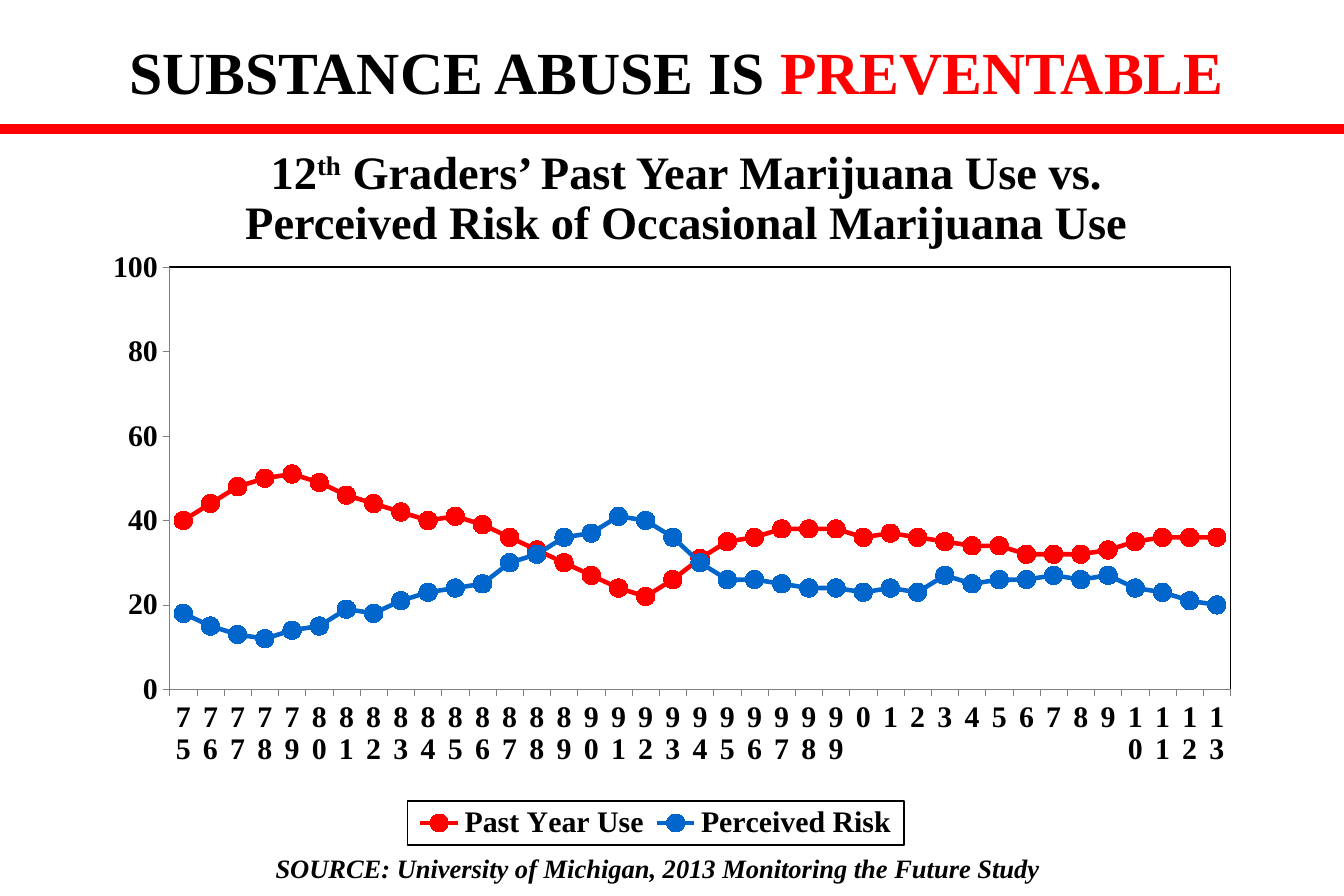
from lxml import etree
from pptx import Presentation
from pptx.chart.data import CategoryChartData
from pptx.dml.color import RGBColor
from pptx.enum.chart import XL_CHART_TYPE as ChartType, XL_LEGEND_POSITION as LegendPos
from pptx.enum.chart import XL_MARKER_STYLE as Marker, XL_TICK_MARK as Tick
from pptx.enum.shapes import MSO_CONNECTOR as Connector
from pptx.enum.text import MSO_ANCHOR as Anchor, PP_ALIGN as Align
from pptx.oxml import parse_xml
from pptx.oxml.ns import nsdecls, qn
from pptx.util import Cm, Pt

BLACK = RGBColor(0, 0, 0)
RED = RGBColor(0xFF, 0, 0)
BLUE = RGBColor(0, 0x66, 0xCC)
GRAY = RGBColor(0x80, 0x80, 0x80)
FONT = "Times New Roman"
SLIDE_W, SLIDE_H = 28.58, 19.05

TITLE = [[(" SUBSTANCE ABUSE IS ", BLACK, 0), ("PREVENTABLE", RED, 0)]]
SUBTITLE = [
    [(" 12", BLACK, 0), ("th", BLACK, 30), (" Graders’ Past Year Marijuana Use vs. ", BLACK, 0)],
    [("Perceived Risk of Occasional Marijuana Use", BLACK, 0)],
]
SOURCE = [[("SOURCE: University of Michigan, 2013 Monitoring the Future Study", BLACK, 0)]]
YEARS = [str(year % 100) for year in range(1975, 2014)]
SERIES = [
    ("Past Year Use", RED,
     [40, 44, 48, 50, 51, 49, 46, 44, 42, 40, 41, 39, 36, 33, 30, 27, 24, 22, 26, 31,
      35, 36, 38, 38, 38, 36, 37, 36, 35, 34, 34, 32, 32, 32, 33, 35, 36, 36, 36]),
    ("Perceived Risk", BLUE,
     [18, 15, 13, 12, 14, 15, 19, 18, 21, 23, 24, 25, 30, 32, 36, 37, 41, 40, 36, 30,
      26, 26, 25, 24, 24, 23, 24, 23, 27, 25, 26, 26, 27, 26, 27, 24, 23, 21, 20]),
]
PLOT_BOX = (0.089, 0.091, 0.897, 0.664)
LEGEND_BOX = (0.29, 0.93, 0.42, 0.07)


def add_text(s, box, lines, size, centered=True, italic=False):
    tf = s.shapes.add_textbox(*map(Cm, box)).text_frame
    tf.word_wrap = True
    p = tf.paragraphs[0]
    if centered:
        tf.vertical_anchor = Anchor.MIDDLE
        p.alignment = Align.CENTER
        p.line_spacing = 0.9
    for i, line in enumerate(lines):
        if i:
            p.add_line_break()
        for text, color, raised in line:
            r = p.add_run()
            r.text = text
            r.font.name, r.font.size = FONT, Pt(size)
            r.font.bold, r.font.italic = True, italic
            r.font.color.rgb = color
            if raised:
                r.font._element.set("baseline", str(raised * 1000))


def layout_xml(box, inner=False):
    target = '<c:layoutTarget val="inner"/>' if inner else ""
    modes = "".join(f'<c:{k}Mode val="edge"/>' for k in "xy")
    sizes = "".join(f'<c:{k} val="{v}"/>' for k, v in zip("xywh", box))
    return parse_xml(f'<c:layout {nsdecls("c")}><c:manualLayout>{target}{modes}{sizes}'
                     '</c:manualLayout></c:layout>')


def frame_xml():
    return parse_xml(f'<c:spPr {nsdecls("c", "a")}><a:noFill/><a:ln w="12700"><a:solidFill>'
                     f'<a:srgbClr val="{BLACK}"/></a:solidFill></a:ln></c:spPr>')


def style_font(font):
    font.name, font.size, font.bold = FONT, Pt(18), True
    font.color.rgb = BLACK


def add_chart(s):
    data = CategoryChartData()
    data.categories = YEARS
    for name, _, values in SERIES:
        data.add_series(name, values)
    box = map(Cm, (1.37, 4.45, 25.15, 13.54))
    chart = s.shapes.add_chart(ChartType.LINE_MARKERS, *box, data).chart
    chart.has_title = False
    style_font(chart.font)

    for ser, (_, color, _) in zip(chart.plots[0].series, SERIES):
        ser.smooth = False
        ser.format.line.color.rgb = color
        ser.format.line.width = Pt(2.75)
        ser.marker.style, ser.marker.size = Marker.CIRCLE, 11
        ser.marker.format.fill.solid()
        ser.marker.format.fill.fore_color.rgb = color
        ser.marker.format.line.color.rgb = color
    chart.plots[0].vary_by_categories = False

    years, percent = chart.category_axis, chart.value_axis
    percent.minimum_scale, percent.maximum_scale, percent.major_unit = 0, 100, 20
    for axis in (years, percent):
        axis.has_major_gridlines = False
        axis.major_tick_mark, axis.minor_tick_mark = Tick.OUTSIDE, Tick.NONE
        axis.format.line.color.rgb = GRAY
        axis.format.line.width = Pt(0.25)
        style_font(axis.tick_labels.font)
    body = years._element.find(qn("c:txPr")).find(qn("a:bodyPr"))
    body.set("rot", "0")
    body.set("vert", "horz")
    skip = parse_xml(f'<c:tickLblSkip {nsdecls("c")} val="1"/>')
    years._element.find(qn("c:noMultiLvlLbl")).addprevious(skip)

    plot_area = chart._chartSpace.chart.plotArea
    for old in plot_area.findall(qn("c:layout")):
        plot_area.remove(old)
    plot_area.insert(0, layout_xml(PLOT_BOX, inner=True))
    plot_area.append(frame_xml())

    chart.has_legend = True
    legend = chart.legend
    legend.position = LegendPos.BOTTOM
    legend.include_in_layout = False
    style_font(legend.font)
    el = legend._element
    for old in el.findall(qn("c:layout")):
        el.remove(old)
    el.find(qn("c:legendPos")).addnext(layout_xml(LEGEND_BOX))
    el.find(qn("c:txPr")).addprevious(frame_xml())


def main():
    prs = Presentation()
    prs.slide_width, prs.slide_height = Cm(SLIDE_W), Cm(SLIDE_H)
    s = prs.slides.add_slide(prs.slide_layouts[6])
    add_text(s, (5.61, 17.98, 22.9, 1.05), SOURCE, 16, centered=False, italic=True)
    add_text(s, (0.38, 0, 27.69, 3.18), TITLE, 36)
    rule = s.shapes.add_connector(Connector.STRAIGHT, 0, Cm(2.74), Cm(SLIDE_W), Cm(2.74))
    rule.line.color.rgb = RED
    rule.line.width = Pt(6)
    etree.SubElement(rule._element.spPr, qn("a:effectLst"))
    add_chart(s)
    add_text(s, (1.37, 2.97, 26.44, 2.54), SUBTITLE, 28)
    prs.save("out.pptx")


if __name__ == "__main__":
    main()
